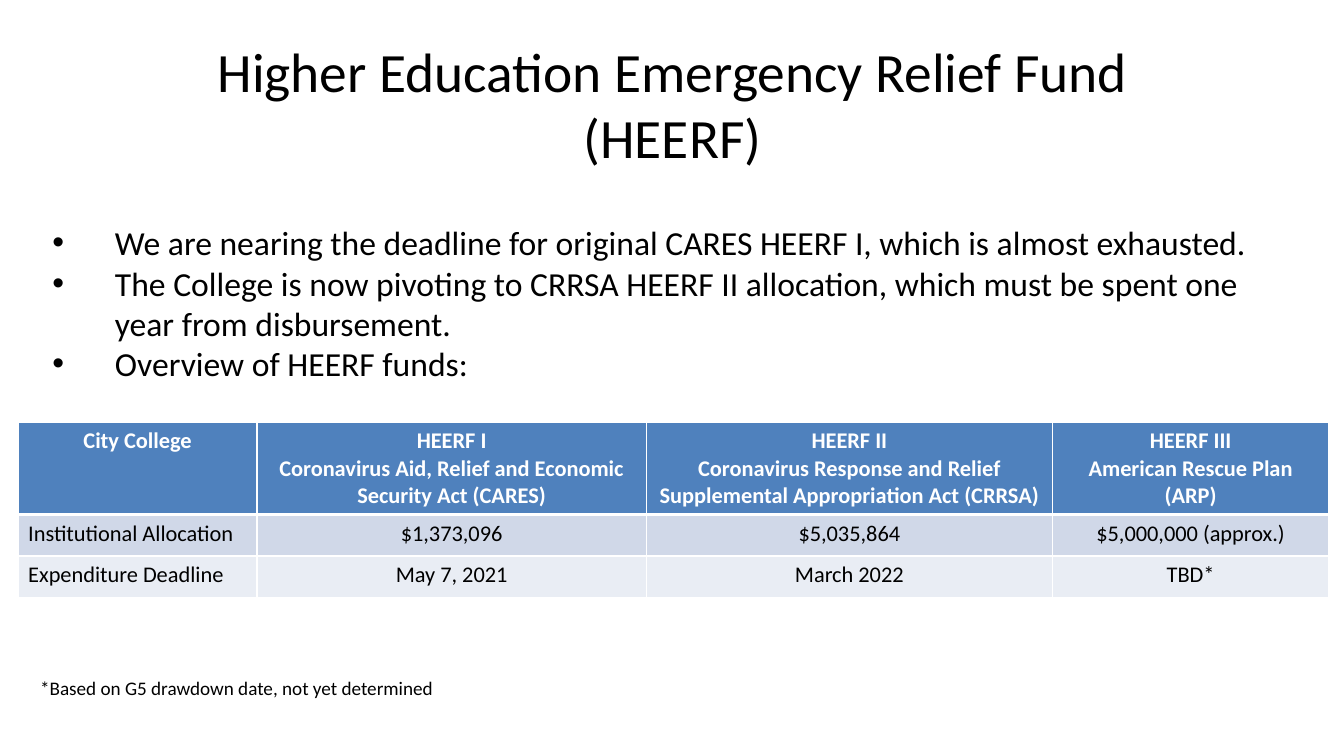
from lxml.etree import SubElement
from pptx import Presentation
from pptx.dml.color import RGBColor
from pptx.enum.text import MSO_ANCHOR as Anchor, MSO_AUTO_SIZE as Fit, PP_ALIGN as Align
from pptx.oxml.ns import qn
from pptx.util import Inches, Pt

BLACK = RGBColor(0, 0, 0)
WHITE = RGBColor(0xFF, 0xFF, 0xFF)
HEAD = RGBColor(0x4F, 0x81, 0xBD)
BANDS = [RGBColor(0xD0, 0xD8, 0xE8), RGBColor(0xE9, 0xED, 0xF4)]

WIDTH, HEIGHT = 13.33, 7.5
TITLE = ["Higher Education Emergency Relief Fund", "(HEERF)"]
POINTS = [
    "We are nearing the deadline for original CARES HEERF I, which is almost exhausted.",
    "The College is now pivoting to CRRSA HEERF II allocation, which must be spent "
    "one year from disbursement.",
    "Overview of HEERF funds:",
]
FUNDS = [
    [["City College"],
     ["HEERF I", "Coronavirus Aid, Relief and Economic Security Act (CARES)"],
     ["HEERF II", "Coronavirus Response and Relief Supplemental Appropriation Act (CRRSA)"],
     ["HEERF III", "American Rescue Plan (ARP)"]],
    [["Institutional Allocation"], ["$1,373,096"], ["$5,035,864"], ["$5,000,000 (approx.)"]],
    [["Expenditure Deadline"], ["May 7, 2021"], ["March 2022"], ["TBD*"]],
]
COLS = [2.37, 3.86, 4.03, 2.74]
ROWS = [0.9, 0.41, 0.41]
NOTE = "*Based on G5 drawdown date, not yet determined"


def place(shape, box):
    shape.left, shape.top, shape.width, shape.height = map(Inches, box)
    frame = shape.text_frame
    frame.word_wrap = True
    frame.auto_size = Fit.NONE
    frame.vertical_anchor = Anchor.MIDDLE
    return frame


def add_run(para, text, size, color=BLACK, bold=False):
    run = para.add_run()
    run.text = text
    font = run.font
    font.name, font.size, font.bold = "Calibri", Pt(size), bold
    font.color.rgb = color


def add_paras(frame, lines):
    """Yield a paragraph for each line, starting with the frame's first one."""
    for i, line in enumerate(lines):
        yield frame.add_paragraph() if i else frame.paragraphs[0], line


def add_title(slide, box):
    para = place(slide.shapes.title, box).paragraphs[0]
    para.alignment = Align.CENTER
    for i, line in enumerate(TITLE):
        if i:
            para.add_line_break()
        add_run(para, line, 39.6)


def add_points(slide, box):
    frame = place(slide.placeholders[1], box)
    for para, text in add_paras(frame, POINTS):
        props = para._p.get_or_add_pPr()
        props.set("marL", str(Inches(0.62)))
        props.set("indent", str(-Inches(0.62)))
        SubElement(props, qn("a:buChar"), char="•")
        para.space_before = Pt(0)
        add_run(para, text, 24)


def add_borders(cell, low):
    """Draw white cell edges; low is the width of the bottom one."""
    props = cell._tc.get_or_add_tcPr()
    for side, width in zip("LRTB", (1, 1, 1, low)):
        line = SubElement(props, qn(f"a:ln{side}"), w=str(Pt(width)))
        fill = SubElement(line, qn("a:solidFill"))
        SubElement(fill, qn("a:srgbClr"), val=str(WHITE))


def add_funds(slide, box):
    table = slide.shapes.add_table(len(ROWS), len(COLS), *map(Inches, box)).table
    for col, width in zip(table.columns, COLS):
        col.width = Inches(width)
    for r, cells in enumerate(FUNDS):
        table.rows[r].height = Inches(ROWS[r])
        top = r == 0
        for c, lines in enumerate(cells):
            cell = table.cell(r, c)
            add_borders(cell, 3 if r < 1 else 1)
            cell.fill.solid()
            cell.fill.fore_color.rgb = HEAD if top else BANDS[r - 1]
            for para, text in add_paras(cell.text_frame, lines):
                para.alignment = Align.CENTER if top or c else Align.LEFT
                add_run(para, text, 16, WHITE if top else BLACK, top)


def add_note(slide, box):
    frame = place(slide.shapes.add_textbox(*map(Inches, box)), box)
    add_run(frame.paragraphs[0], NOTE, 13.7)


def main():
    deck = Presentation()
    deck.slide_width, deck.slide_height = Inches(WIDTH), Inches(HEIGHT)
    slide = deck.slides.add_slide(deck.slide_layouts[1])
    add_title(slide, (0.67, 0.4, 12, 1.25))
    add_points(slide, (0.42, 2.21, 12.48, 1.59))
    add_funds(slide, (0.18, 4.19, sum(COLS), sum(ROWS)))
    add_note(slide, (0.3, 6.46, 4.53, 0.72))
    deck.save("out.pptx")


if __name__ == "__main__":
    main()
